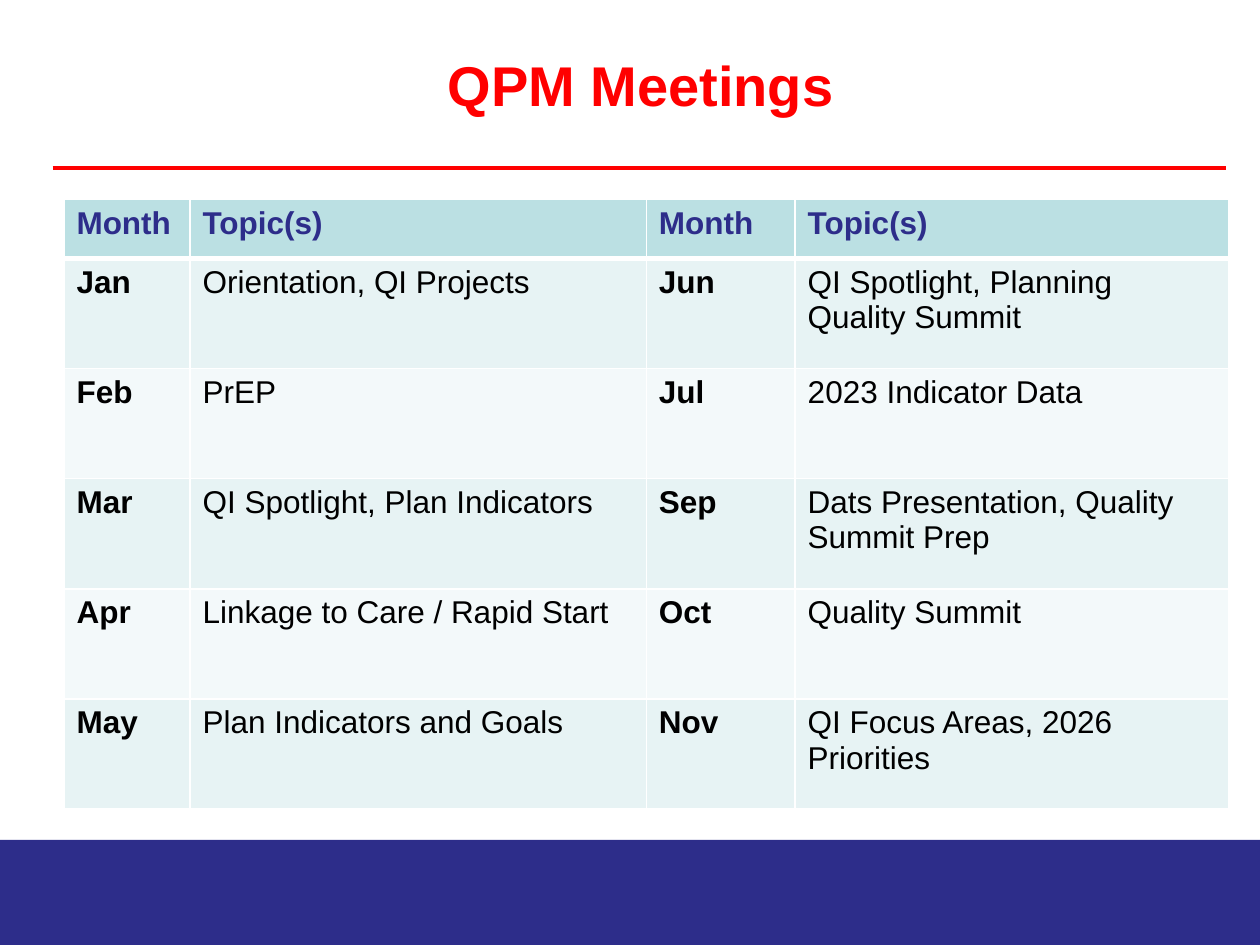
"""Build the QPM Meetings slide with its yearly schedule table."""
from dataclasses import dataclass

from lxml import etree
from pptx import Presentation
from pptx import util as u
from pptx.dml.color import RGBColor
from pptx.enum import shapes, text
from pptx.oxml import ns

FONT = "Arial"
NAVY, RED, WHITE, BLACK = "2D2D8A", "FF0000", "FFFFFF", "000000"
HEADER_FILL, BAND_FILLS = "BBE0E3", ("E7F3F4", "F3F9FA")
COLUMN_WIDTHS = (2.54, 9.2, 3, 8.74)
HEADER_HEIGHT, ROW_HEIGHT = 1.19, 2.22


@dataclass
class Meeting:
    month: str
    topics: str


@dataclass
class CellStyle:
    fill: str
    color: str
    bold: bool
    bottom: float = 1


FIRST_HALF = [
    Meeting("Jan", "Orientation, QI Projects"),
    Meeting("Feb", "PrEP"),
    Meeting("Mar", "QI Spotlight, Plan Indicators"),
    Meeting("Apr", "Linkage to Care / Rapid Start"),
    Meeting("May", "Plan Indicators and Goals"),
]
SECOND_HALF = [
    Meeting("Jun", "QI Spotlight, Planning Quality Summit"),
    Meeting("Jul", "2023 Indicator Data"),
    Meeting("Sep", "Dats Presentation, Quality Summit Prep"),
    Meeting("Oct", "Quality Summit"),
    Meeting("Nov", "QI Focus Areas, 2026 Priorities"),
]


def rgb(value: str) -> RGBColor:
    return RGBColor.from_string(value)


def format_text(frame, size: float, color: str, bold: bool) -> None:
    for para in frame.paragraphs:
        for span in para.runs:
            span.font.name = FONT
            span.font.size = u.Pt(size)
            span.font.bold = bold
            span.font.color.rgb = rgb(color)


def add_border(cell, side: str, width: float) -> None:
    properties = cell._tc.get_or_add_tcPr()
    line = etree.SubElement(properties, ns.qn(f"a:ln{side}"), w=str(u.Pt(width)))
    fill = etree.SubElement(line, ns.qn("a:solidFill"))
    etree.SubElement(fill, ns.qn("a:srgbClr"), val=WHITE)


def fill_cell(cell, words: str, style: CellStyle, top: float) -> None:
    cell.text_frame.text = words
    format_text(cell.text_frame, 18, style.color, style.bold)
    for side, width in (("L", 1), ("R", 1), ("T", top), ("B", style.bottom)):
        add_border(cell, side, width)
    cell.fill.solid()
    cell.fill.fore_color.rgb = rgb(style.fill)


def add_title(page, words: str) -> None:
    title = page.shapes.title
    title.left, title.top = u.Cm(2.12), u.Cm(0.64)
    title.width, title.height = u.Cm(21.59), u.Cm(2.12)
    title.text_frame.text = words
    title.text_frame.vertical_anchor = text.MSO_ANCHOR.MIDDLE
    title.text_frame.paragraphs[0].alignment = text.PP_ALIGN.CENTER
    format_text(title.text_frame, 32, RED, True)


def add_footer_band(page) -> None:
    band = page.shapes.add_shape(
        shapes.MSO_SHAPE.RECTANGLE, u.Cm(0), u.Cm(16.93), u.Cm(25.4), u.Cm(2.12))
    band.shadow.inherit = False
    band.fill.solid()
    band.fill.fore_color.rgb = rgb(NAVY)
    band.line.fill.background()


def add_title_rule(page) -> None:
    rule = page.shapes.add_connector(
        shapes.MSO_CONNECTOR.STRAIGHT, u.Cm(1.06), u.Cm(3.39), u.Cm(24.71), u.Cm(3.39))
    rule.line.color.rgb = rgb(RED)
    rule.line.width = u.Pt(2)
    etree.SubElement(rule._element.spPr, ns.qn("a:effectLst"))


def add_schedule(page) -> None:
    rows = [("Month", "Topic(s)") * 2]
    for first, second in zip(FIRST_HALF, SECOND_HALF):
        rows.append((first.month, first.topics, second.month, second.topics))
    heights = [HEADER_HEIGHT] + [ROW_HEIGHT] * len(FIRST_HALF)
    table = page.shapes.add_table(
        len(rows), len(COLUMN_WIDTHS), u.Cm(1.29), u.Cm(4.02),
        u.Cm(sum(COLUMN_WIDTHS)), u.Cm(sum(heights))).table
    for column, width in zip(table.columns, COLUMN_WIDTHS):
        column.width = u.Cm(width)
    for row, height in zip(table.rows, heights):
        row.height = u.Cm(height)
    header = CellStyle(HEADER_FILL, NAVY, True, bottom=3)
    for r, row in enumerate(rows):
        for c, words in enumerate(row):
            body = CellStyle(BAND_FILLS[(r - 1) % 2], BLACK, c % 2 == 0)
            fill_cell(table.cell(r, c), words, body if r else header, 3 if r == 1 else 1)


def main() -> None:
    deck = Presentation()
    deck.slide_width, deck.slide_height = u.Cm(25.4), u.Cm(19.05)
    page = deck.slides.add_slide(deck.slide_layouts[5])
    page.background.fill.solid()
    page.background.fill.fore_color.rgb = rgb(WHITE)
    add_footer_band(page)
    add_title_rule(page)
    add_title(page, "QPM Meetings")
    add_schedule(page)
    deck.save("out.pptx")


if __name__ == "__main__":
    main()
